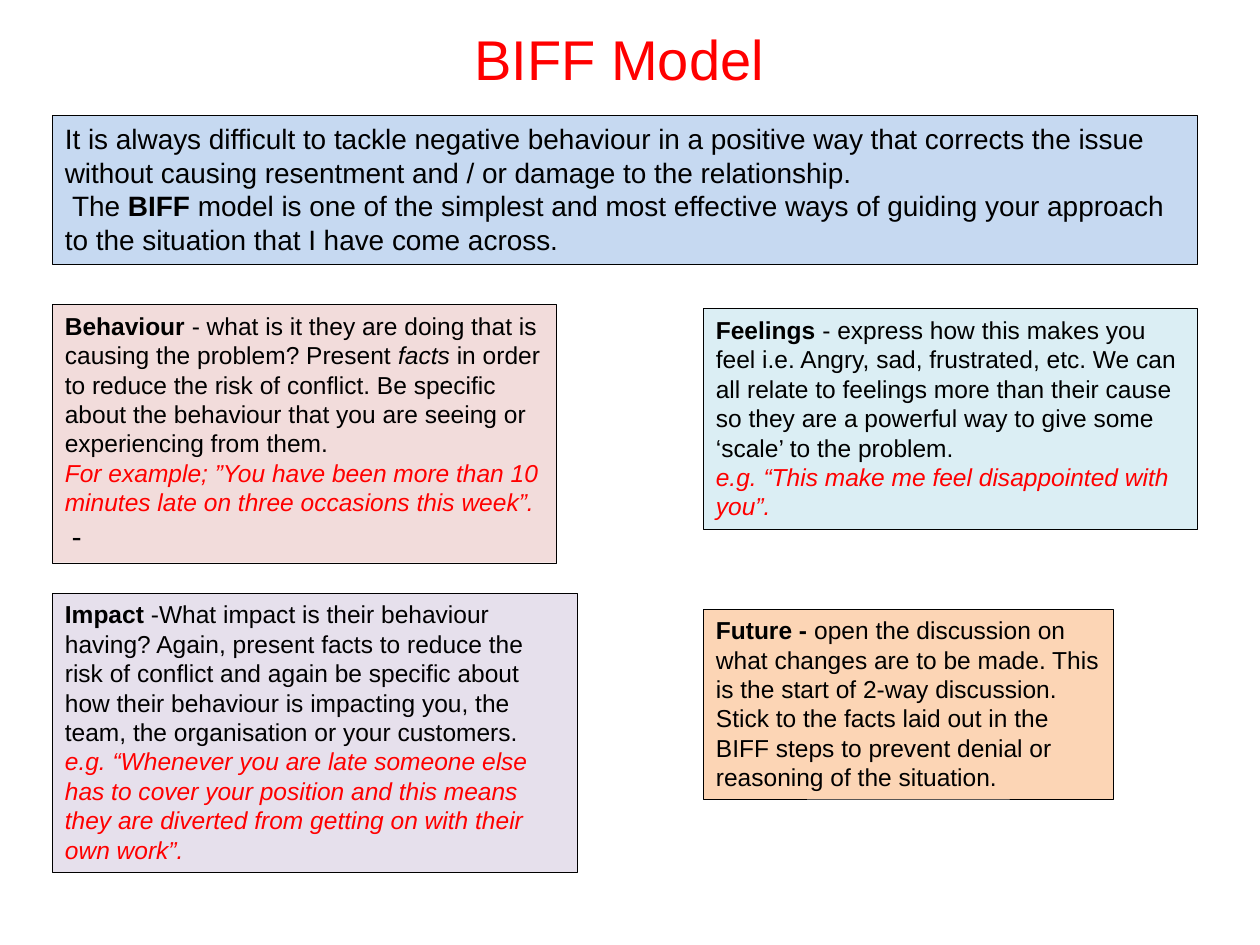
from dataclasses import dataclass

from pptx import Presentation
from pptx.dml.color import RGBColor
from pptx.enum.text import MSO_ANCHOR as Anchor, MSO_AUTO_SIZE as AutoSize, PP_ALIGN as Align
from pptx.util import Inches, Pt

COLUMNS, ROWS = 120, 90
SLIDE_WIDTH, SLIDE_HEIGHT = Inches(10), Inches(7.5)


@dataclass(frozen=True)
class Theme:
    ink: str = "000000"
    accent: str = "FF0000"
    intro_fill: str = "C6D9F1"
    behaviour_fill: str = "F2DCDB"
    impact_fill: str = "E6E0EC"
    feelings_fill: str = "DBEEF4"
    future_fill: str = "FCD5B5"
    font: str = "Arial"
    dash_font: str = "Calibri"
    title_size: int = 32
    intro_size: int = 16
    card_size: int = 14
    dash_size: int = 18
    border: float = 0.25


THEME = Theme()


@dataclass(frozen=True)
class Span:
    text: str
    bold: bool = False
    italic: bool = False
    color: str = THEME.ink
    font: str = THEME.font
    size: int | None = None


@dataclass(frozen=True)
class Card:
    column: float
    row: float
    columns: float
    rows: float
    fill: str
    paragraphs: tuple[tuple[Span, ...], ...]
    size: int = THEME.card_size


def example(text: str) -> tuple[Span, ...]:
    return (Span(text, italic=True, color=THEME.accent),)


CARDS = (
    Card(5, 11, 109, 14.2, THEME.intro_fill, (
        (Span("It is always difficult to tackle negative behaviour in a positive way that corrects "
              "the issue without causing resentment and / or damage to the relationship."),),
        (Span(" The "), Span("BIFF ", bold=True),
         Span("model is one of the simplest and most effective ways of guiding your approach "
              "to the situation that I have come across.")),
    ), THEME.intro_size),
    Card(5, 29, 48, 24.6, THEME.behaviour_fill, (
        (Span("Behaviour", bold=True),
         Span(" - what is it they are doing that is causing the problem? Present "),
         Span("facts", italic=True),
         Span(" in order to reduce the risk of conflict. Be specific about the behaviour "
              "that you are seeing or experiencing from them.")),
        example("For example; ”You have been more than 10 minutes late on three occasions this week”."),
        (Span(" -", font=THEME.dash_font, size=THEME.dash_size),),
    )),
    Card(5, 56.5, 50, 26.6, THEME.impact_fill, (
        (Span("Impact", bold=True),
         Span(" -What impact is their behaviour having? Again, present facts to reduce the risk of "
              "conflict and again be specific about how their behaviour is impacting you, the team, "
              "the organisation or your customers.")),
        example("e.g. “Whenever you are late someone else has to cover your position and this means "
                "they are diverted from getting on with their own work”."),
    )),
    Card(67, 29.4, 47, 21, THEME.feelings_fill, (
        (Span("Feelings", bold=True),
         Span(" - express how this makes you feel i.e. Angry, sad, frustrated, etc. We can all relate "
              "to feelings more than their cause so they are a powerful way to give some ‘scale’ "
              "to the problem.")),
        example("e.g. “This make me feel disappointed with you”."),
    )),
    Card(67, 58, 39, 18.1, THEME.future_fill, (
        (Span("Future -", bold=True),
         Span(" open the discussion on what changes are to be made. This is the start of 2-way "
              "discussion. Stick to the facts laid out in the BIFF steps to prevent denial or "
              "reasoning of the situation.")),
    )),
)


def grid_box(column: float, row: float, columns: float, rows: float) -> tuple[int, ...]:
    unit_x, unit_y = SLIDE_WIDTH / COLUMNS, SLIDE_HEIGHT / ROWS
    return tuple(round(value) for value in
                 (column * unit_x, row * unit_y, columns * unit_x, rows * unit_y))


def add_text(paragraph, text: str, *, size: int, color: str = THEME.ink,
             font: str = THEME.font, bold: bool = False, italic: bool = False) -> None:
    run = paragraph.add_run()
    run.text = text
    run.font.name = font
    run.font.size = Pt(size)
    run.font.bold = bold
    run.font.italic = italic
    run.font.color.rgb = RGBColor.from_string(color)


def format_title(title, text: str) -> None:
    title.left, title.top, title.width, title.height = grid_box(5, -2, 108, 15)
    title.text_frame.vertical_anchor = Anchor.MIDDLE
    paragraph = title.text_frame.paragraphs[0]
    paragraph.alignment = Align.CENTER
    add_text(paragraph, text, size=THEME.title_size, color=THEME.accent)


def draw_card(slide, card: Card) -> None:
    shape = slide.shapes.add_textbox(*grid_box(card.column, card.row, card.columns, card.rows))
    shape.fill.solid()
    shape.fill.fore_color.rgb = RGBColor.from_string(card.fill)
    shape.line.color.rgb = RGBColor.from_string(THEME.ink)
    shape.line.width = Pt(THEME.border)
    frame = shape.text_frame
    frame.word_wrap = True
    frame.auto_size = AutoSize.SHAPE_TO_FIT_TEXT
    for index, spans in enumerate(card.paragraphs):
        paragraph = frame.add_paragraph() if index else frame.paragraphs[0]
        for span in spans:
            add_text(paragraph, span.text, size=span.size or card.size, color=span.color,
                     font=span.font, bold=span.bold, italic=span.italic)


def main() -> None:
    presentation = Presentation()
    presentation.slide_width, presentation.slide_height = SLIDE_WIDTH, SLIDE_HEIGHT
    slide = presentation.slides.add_slide(presentation.slide_layouts.get_by_name("Title Only"))
    format_title(slide.shapes.title, "BIFF Model")
    for card in CARDS:
        draw_card(slide, card)
    presentation.save("out.pptx")


if __name__ == "__main__":
    main()
